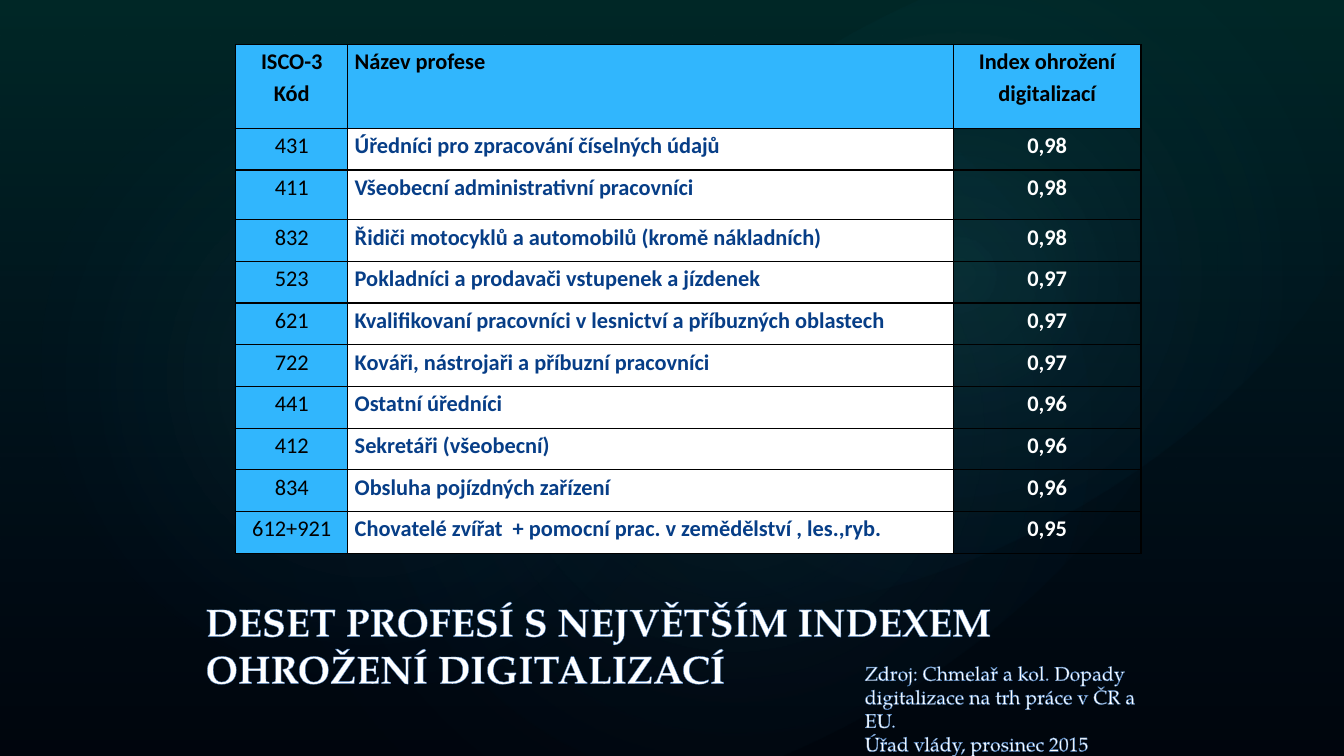
from lxml import etree
from pptx import Presentation
from pptx.dml.color import RGBColor
from pptx.enum.shapes import MSO_SHAPE as Shape
from pptx.enum.text import MSO_ANCHOR as Anchor, MSO_AUTO_SIZE as AutoSize, PP_ALIGN as Align
from pptx.oxml import parse_xml
from pptx.oxml.ns import nsdecls, qn
from pptx.util import Pt

SERIF, SANS = "TeX Gyre Pagella", "Calibri"
WHITE, BLACK, SKY, NAVY, AQUA = "FFFFFF", "000000", "31B6FD", "073E87", "5AFBF8"
OUTLINE = "467AB8"

LINEAR = '<a:lin ang="5400000" scaled="0"/>'
RADIAL = '<a:path path="circle"><a:fillToRect l="50000" t="50000" r="50000" b="50000"/></a:path>'

# left, top, width, height, rotation, opacity at the centre
GLOWS = [
    (144, 82, 760.3, 449.3, 328.7, 7),
    (43.9, 33.1, 436.3, 470.2, 294.3, 8),
    (344.2, 9.4, 680.4, 374.4, 328.7, 8),
]

COLUMN_WIDTHS = [80, 432.7, 133.9]
HEADER_HEIGHT, ROW_HEIGHT, TALL_ROW_HEIGHT = 60, 29.8, 35.4
TALL_CODE = "411"
HEADER = ("ISCO-3 Kód", "Název profese", "Index ohrožení digitalizací")
PROFESSIONS = [
    ("431", "Úředníci pro zpracování číselných údajů", "0,98"),
    ("411", "Všeobecní administrativní pracovníci", "0,98"),
    ("832", "Řidiči motocyklů a automobilů (kromě nákladních)", "0,98"),
    ("523", "Pokladníci a prodavači vstupenek a jízdenek", "0,97"),
    ("621", "Kvalifikovaní pracovníci v lesnictví a příbuzných oblastech", "0,97"),
    ("722", "Kováři, nástrojaři a příbuzní pracovníci", "0,97"),
    ("441", "Ostatní úředníci", "0,96"),
    ("412", "Sekretáři (všeobecní)", "0,96"),
    ("834", "Obsluha pojízdných zařízení", "0,96"),
    ("612+921", "Chovatelé zvířat  + pomocní prac. v zemědělství , les.,ryb.", "0,95"),
]
# text colour, bold, cell fill for each column
HEADER_STYLES = [(BLACK, True, SKY)] * 3
BODY_STYLES = [(BLACK, False, SKY), (NAVY, True, WHITE), (WHITE, True, None)]
ALIGNMENTS = [Align.CENTER, Align.LEFT, Align.CENTER]


def rgb(color):
    return RGBColor.from_string(color)


def add_gradient_shape(slide, kind, box, stops, direction, rotation=0):
    """Stops are (position, colour, opacity), both numbers in percent."""
    shape = slide.shapes.add_shape(kind, *map(Pt, box))
    shape.rotation = rotation
    shape.shadow.inherit = False
    shape.line.fill.background()
    shape.fill.background()
    stop_xml = "".join(
        f'<a:gs pos="{position * 1000}"><a:srgbClr val="{color}">'
        f'<a:alpha val="{opacity * 1000}"/></a:srgbClr></a:gs>'
        for position, color, opacity in stops
    )
    gradient = parse_xml(
        f'<a:gradFill {nsdecls("a")} rotWithShape="1"><a:gsLst>{stop_xml}</a:gsLst>{direction}</a:gradFill>'
    )
    properties = shape.element.spPr
    properties.replace(properties.find(qn("a:noFill")), gradient)


def add_run(paragraph, text, size, font, color, bold=False):
    run = paragraph.add_run()
    run.text = text
    run.font.size = Pt(size)
    run.font.name = font
    run.font.bold = bold
    run.font.color.rgb = rgb(color)
    return run


def add_line_xml(parent, tag, color, width, index):
    line = etree.Element(qn(tag), w=str(Pt(width)))
    fill = etree.SubElement(line, qn("a:solidFill"))
    etree.SubElement(fill, qn("a:srgbClr"), val=color)
    parent.insert(index, line)


def add_outlined_text(slide, box, paragraphs, size, bold=False, anchor=Anchor.TOP):
    """Each paragraph is a list of lines, parted by line breaks."""
    frame = slide.shapes.add_textbox(*map(Pt, box)).text_frame
    frame.word_wrap = True
    frame.auto_size = AutoSize.NONE
    frame.vertical_anchor = anchor
    for number, lines in enumerate(paragraphs):
        paragraph = frame.add_paragraph() if number else frame.paragraphs[0]
        for position, text in enumerate(lines):
            if position:
                paragraph.add_line_break()
            run = add_run(paragraph, text, size, SERIF, WHITE, bold)
            add_line_xml(run.font._element, "a:ln", OUTLINE, 0.83, 0)


def fill_cell(cell, text, style, alignment):
    color, bold, fill = style
    cell.margin_left = cell.margin_right = Pt(5)
    cell.margin_top = cell.margin_bottom = 0
    paragraph = cell.text_frame.paragraphs[0]
    paragraph.alignment = alignment
    paragraph.line_spacing = 1.15
    add_run(paragraph, text, 16, SANS, color, bold)
    if fill:
        cell.fill.solid()
        cell.fill.fore_color.rgb = rgb(fill)
    else:
        cell.fill.background()
    for index, side in enumerate("LRTB"):
        add_line_xml(cell._tc.tcPr, f"a:ln{side}", BLACK, 1, index)


def add_profession_table(slide):
    rows = [HEADER, *PROFESSIONS]
    heights = [HEADER_HEIGHT] + [
        TALL_ROW_HEIGHT if code == TALL_CODE else ROW_HEIGHT for code, _, _ in PROFESSIONS
    ]
    table = slide.shapes.add_table(
        len(rows), len(HEADER), Pt(168.4), Pt(31.7), Pt(sum(COLUMN_WIDTHS)), Pt(sum(heights))
    ).table
    table.first_row = table.horz_banding = False
    for column, width in zip(table.columns, COLUMN_WIDTHS):
        column.width = Pt(width)
    for row, height, texts in zip(table.rows, heights, rows):
        row.height = Pt(height)
        styles = HEADER_STYLES if texts is HEADER else BODY_STYLES
        for cell, text, style, alignment in zip(row.cells, texts, styles, ALIGNMENTS):
            fill_cell(cell, text, style, alignment)


def add_background(slide):
    slide.background.fill.solid()
    slide.background.fill.fore_color.rgb = rgb(BLACK)
    add_gradient_shape(slide, Shape.RECTANGLE, (0, 0, 960, 540),
                       [(0, "03706E", 36), (100, NAVY, 10)], LINEAR)
    for *box, rotation, opacity in GLOWS:
        add_gradient_shape(slide, Shape.OVAL, box,
                           [(0, AQUA, opacity), (58, NAVY, 0), (100, NAVY, 0)], RADIAL, rotation)


def main():
    presentation = Presentation()
    presentation.slide_width, presentation.slide_height = Pt(960), Pt(540)
    slide = presentation.slides.add_slide(presentation.slide_layouts[6])
    add_background(slide)
    add_outlined_text(slide, (139.7, 419, 657.4, 78.5),
                      [["DESET PROFESÍ S NEJVĚTŠÍM INDEXEM ", "OHROŽENÍ DIGITALIZACÍ"]],
                      28, bold=True, anchor=Anchor.BOTTOM)
    add_profession_table(slide)
    add_outlined_text(slide, (610.6, 468.7, 209.5, 74.9),
                      [["Zdroj: Chmelař a kol. Dopady digitalizace na trh práce v ČR a EU."],
                       ["Úřad vlády, prosinec 2015"]], 14)
    presentation.save("out.pptx")


if __name__ == "__main__":
    main()
